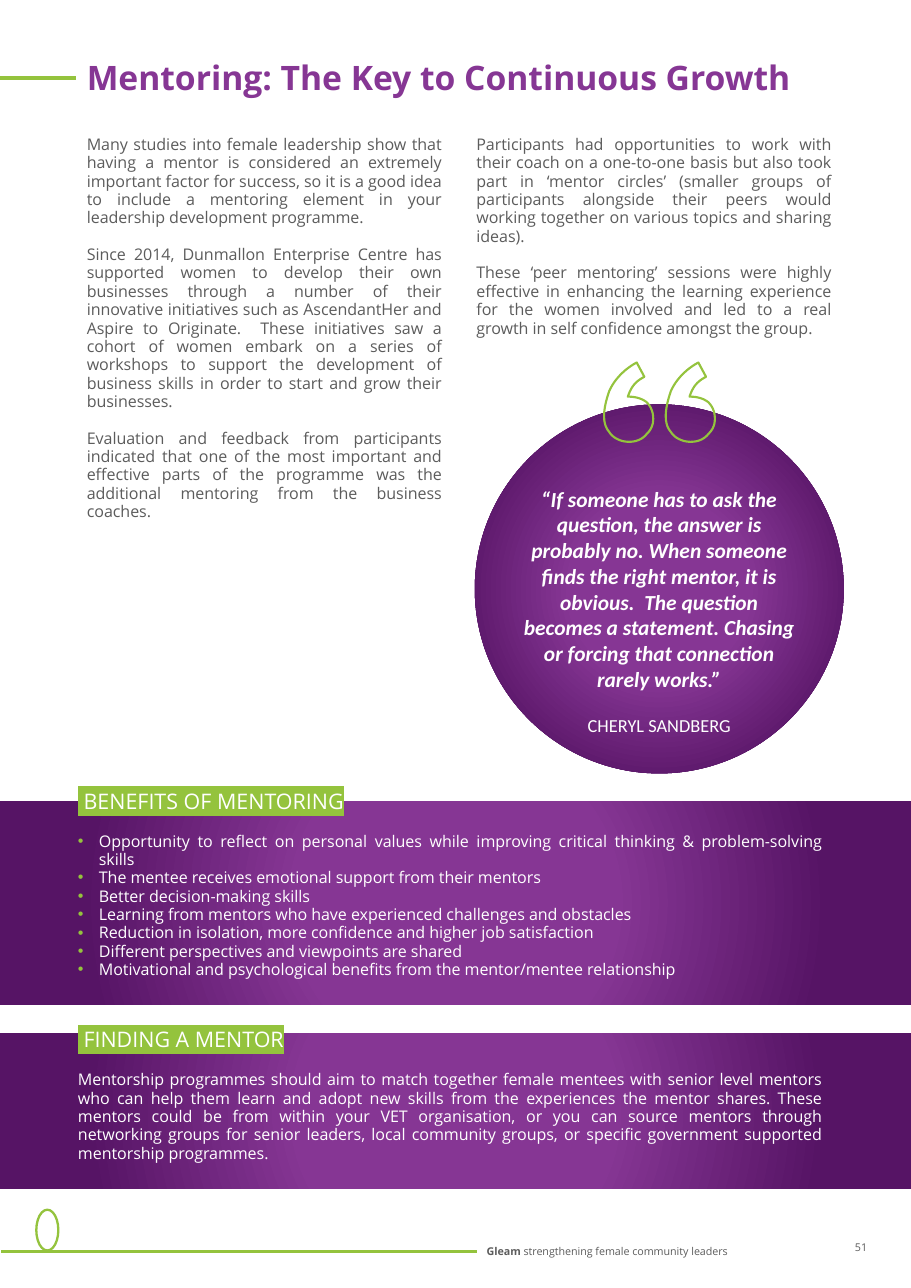
from lxml import etree
from pptx import Presentation, util as u
from pptx.dml.color import RGBColor
from pptx.enum import shapes, text
from pptx.oxml import ns

PX = 9144
HUE = {"purple": "863694", "plum": "561465", "green": "94C33D",
       "grey": "5C5C5C", "white": "FFFFFF"}
SANS = "Open Sans"
ALIGN = text.PP_ALIGN

STORY = [
    "Many studies into female leadership show that having a mentor is considered an extremely important factor for success, so it is a good idea to include a mentoring element in your leadership development programme.",
    "Since 2014, Dunmallon Enterprise Centre has supported women to develop their own businesses through a number of their innovative initiatives such as AscendantHer and Aspire to Originate.  These initiatives saw a cohort of women embark on a series of workshops to support the development of business skills in order to start and grow their businesses.",
    "Evaluation and feedback from participants indicated that one of the most important and effective parts of the programme was the additional mentoring from the business coaches.",
    "Participants had opportunities to work with their coach on a one-to-one basis but also took part in ‘mentor circles’ (smaller groups of participants alongside their peers would working together on various topics and sharing ideas).",
    "These ‘peer mentoring’ sessions were highly effective in enhancing the learning experience for the women involved and led to a real growth in self confidence amongst the group.",
]
GAINS = [
    "Opportunity to reflect on personal values while improving critical thinking & problem-solving skills",
    "The mentee receives emotional support from their mentors",
    "Better decision-making skills",
    "Learning from mentors who have experienced challenges and obstacles",
    "Reduction in isolation, more confidence and higher job satisfaction",
    "Different perspectives and viewpoints are shared",
    "Motivational and psychological benefits from the mentor/mentee relationship",
]
FINDING = "Mentorship programmes should aim to match together female mentees with senior level mentors who can help them learn and adopt new skills from the experiences the mentor shares. These mentors could be from within your VET organisation, or you can source mentors through networking groups for senior leaders, local community groups, or specific government supported mentorship programmes."
QUOTE = "“If someone has to ask the question, the answer is probably no. When someone finds the right mentor, it is obvious.  The question becomes a statement. Chasing or forcing that connection rarely works.”"

MARK = [(578, 329), (567, 335), (558, 344), (553, 355), (549, 367), (545, 383),
        (553, 392), (556, 397), (563, 401), (571, 401), (577, 401), (583, 399),
        (587, 394), (591, 390), (593, 386), (593, 380), (593, 374), (591, 369),
        (587, 365), (583, 362), (578, 360), (570, 360), (573, 351), (577, 346),
        (585, 342)]


def tag(parent, name, **attrs):
    return etree.SubElement(parent, ns.qn(name), attrs)


class Page:
    """Draws styled elements on one slide, measured in px."""

    def __init__(self, deck):
        self.slide = deck.slides.add_slide(deck.slide_layouts[6])
        self.items = self.slide.shapes

    def hue(self, name):
        return RGBColor.from_string(HUE[name])

    def glow(self, kind, *box):
        shape = self.items.add_shape(kind, *(v * PX for v in box))
        shape.shadow.inherit = False
        shape.line.fill.background()
        shape.fill.background()
        old = shape.element.spPr.find(ns.qn("a:noFill"))
        grad = etree.Element(ns.qn("a:gradFill"), rotWithShape="1")
        stops = tag(grad, "a:gsLst")
        for pos, name in ((4, "purple"), (34, "purple"), (80, "plum")):
            stop = tag(stops, "a:gs", pos=str(pos * 1000))
            tag(stop, "a:srgbClr", val=HUE[name])
        focus = tag(grad, "a:path", path="circle")
        tag(focus, "a:fillToRect", **dict.fromkeys("ltrb", "50000"))
        old.getparent().replace(old, grad)

    def ring(self, shape, width):
        shape.shadow.inherit = False
        shape.fill.background()
        shape.line.color.rgb = self.hue("green")
        shape.line.width = u.Pt(width)

    def bud(self, *box):
        self.ring(self.items.add_shape(shapes.MSO_SHAPE.OVAL, *(v * PX for v in box)), 1.5)

    def mark(self, shift):
        dots = []
        for i in range(0, len(MARK) - 1, 3):
            a, b, c, d = MARK[i:i + 4]
            for n in range(1, 13):
                t = n / 12
                s = 1 - t
                dots.append(tuple(
                    (s**3 * a[k] + 3 * s * s * t * b[k] + 3 * s * t * t * c[k]
                     + t**3 * d[k] + (shift if k == 0 else 0)) * PX for k in (0, 1)))
        pen = self.items.build_freeform((MARK[0][0] + shift) * PX, MARK[0][1] * PX)
        pen.add_line_segments(dots, close=True)
        self.ring(pen.convert_to_shape(), 1.4)

    def rule(self, left, right, y, width):
        line = self.items.add_connector(
            shapes.MSO_CONNECTOR.STRAIGHT, left * PX, y * PX, right * PX, y * PX)
        line.line.color.rgb = self.hue("green")
        line.line.width = u.Pt(width)
        tag(line.element.spPr, "a:effectLst")

    def box(self, *box, anchor=text.MSO_ANCHOR.TOP):
        frame = self.items.add_textbox(*(v * PX for v in box)).text_frame
        frame.word_wrap = True
        frame.vertical_anchor = anchor
        return frame

    def para(self, frame, words, size, color, align=ALIGN.LEFT, lead=None, after=0,
             font=SANS, bold=False, italic=False):
        para = frame.paragraphs[0]
        if para.runs:
            para = frame.add_paragraph()
        para.text = words
        para.alignment = align
        para.space_after = u.Pt(after)
        if lead:
            para.line_spacing = u.Pt(lead)
        self.style(para.runs[0], size, color, font, bold, italic)
        return para

    def style(self, run, size, color, font=SANS, bold=False, italic=False):
        face = run.font
        face.name, face.size, face.bold, face.italic = font, u.Pt(size), bold, italic
        face.color.rgb = self.hue(color)

    def body(self, frame, words, color="white", after=0):
        return self.para(frame, words, 10.5, color, ALIGN.JUSTIFY, 12, after)

    def head(self, frame, words):
        para = self.para(frame, words, 14, "white", ALIGN.JUSTIFY, 12, 12)
        fill = para.runs[0].font._element.find(ns.qn("a:solidFill"))
        glow = etree.Element(ns.qn("a:highlight"))
        tag(glow, "a:srgbClr", val=HUE["green"])
        fill.addnext(glow)

    def bullet(self, frame, words, after):
        props = self.body(frame, words, after=after)._p.get_or_add_pPr()
        props.set("marL", str(19 * PX))
        props.set("indent", str(-19 * PX))
        tag(tag(props, "a:buClr"), "a:srgbClr", val=HUE["green"])
        tag(props, "a:buFont", typeface="Arial")
        tag(props, "a:buChar", char="•")


def main():
    deck = Presentation()
    deck.slide_width, deck.slide_height = 827 * PX, 1169 * PX
    page = Page(deck)
    middle = text.MSO_ANCHOR.MIDDLE

    foot = page.para(page.box(432, 1115, 324, 41, anchor=middle), "Gleam", 7, "grey", bold=True)
    tail = foot.add_run()
    tail.text = " strengthening female community leaders"
    page.style(tail, 7, "grey")
    page.rule(1, 433, 1136, 1.5)
    page.bud(33, 1098, 20, 37)

    page.glow(shapes.MSO_SHAPE.RECTANGLE, 0, 938, 827, 141)
    page.para(page.box(615, 1101, 182, 62, anchor=middle), "51", 7, "grey", ALIGN.RIGHT)
    page.para(page.box(69, 49, 680, 91), "Mentoring: The Key to Continuous Growth",
              22, "purple", lead=24.4, bold=True)
    page.rule(0, 69, 71, 2.25)

    story = page.box(69, 118, 696, 404)
    cols = story._txBody.bodyPr
    cols.set("numCol", "2")
    cols.set("spcCol", str(31 * PX))
    for i, words in enumerate(STORY):
        page.body(story, words, "grey", after=24 if i == 2 else 12)

    page.glow(shapes.MSO_SHAPE.OVAL, 431, 367, 335, 335)
    quote = page.box(463, 436, 271, 239)
    quote.auto_size = text.MSO_AUTO_SIZE.SHAPE_TO_FIT_TEXT
    page.para(quote, QUOTE, 14, "white", ALIGN.CENTER, after=14.6,
              font="Calibri", bold=True, italic=True)
    page.para(quote, "CHERYL SANDBERG", 12, "white", ALIGN.CENTER, font="Calibri")
    for shift in (0, 56):
        page.mark(shift)

    page.glow(shapes.MSO_SHAPE.RECTANGLE, 0, 727, 827, 185)
    panel = page.box(61, 717, 696, 264)
    page.head(panel, " BENEFITS OF MENTORING")
    for words in GAINS:
        page.bullet(panel, words, after=36 if words == GAINS[-1] else 0)
    page.head(panel, " FINDING A MENTOR")
    page.body(panel, FINDING)

    deck.save("out.pptx")


if __name__ == "__main__":
    main()
